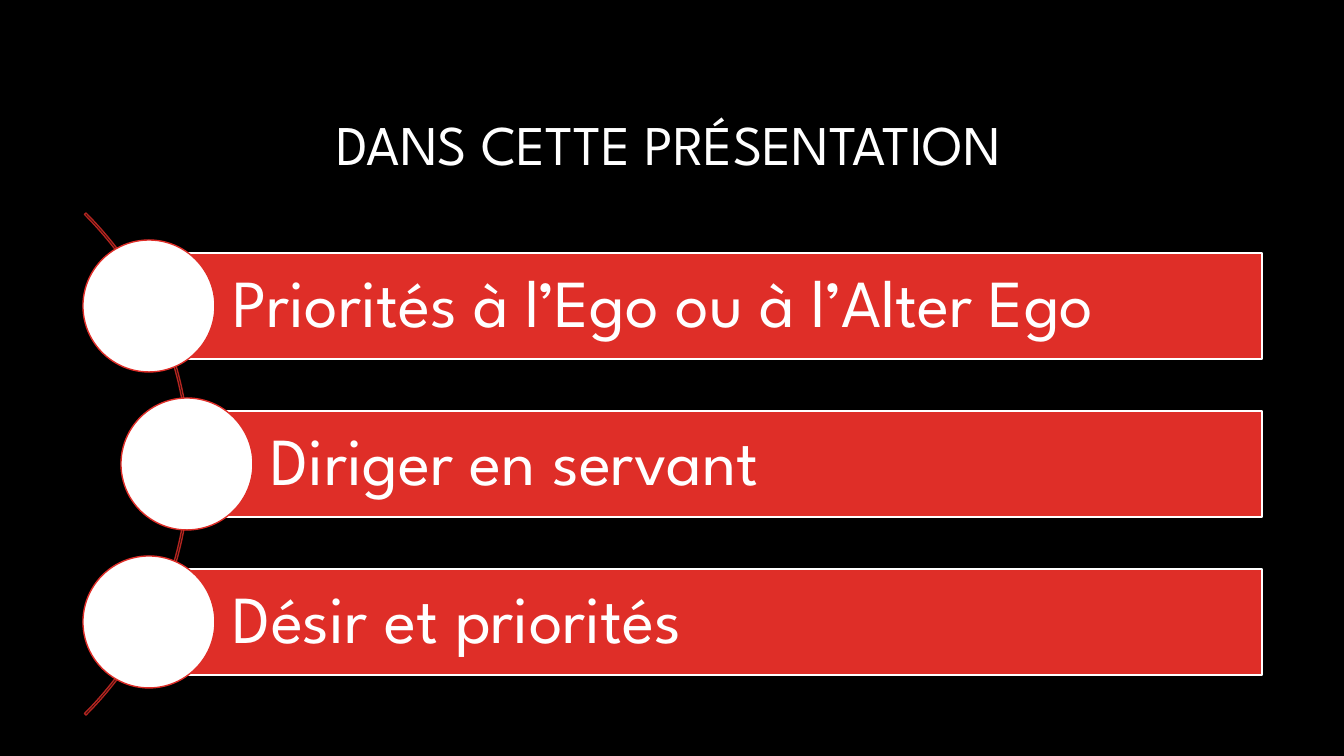
from pptx import Presentation
from pptx import util as u
from pptx.dml.color import RGBColor
from pptx.enum import shapes, text

BLACK = RGBColor(0x00, 0x00, 0x00)
WHITE = RGBColor(0xFF, 0xFF, 0xFF)
RED = RGBColor(0xDF, 0x2E, 0x28)
DARK_RED = RGBColor(0xB3, 0x25, 0x20)
FONT = "League Spartan"
TOPICS = ["Priorités à l’Ego ou à l’Alter Ego", "Diriger en servant", "Désir et priorités"]


def px(n):
    return u.Emu(round(n * 914400 / 100.8))


def add_shape(s, kind, box, fill, line):
    sp = s.shapes.add_shape(kind, *map(px, box))
    sp.shadow.inherit = False
    if fill is None:
        sp.fill.background()
    else:
        sp.fill.solid()
        sp.fill.fore_color.rgb = fill
    sp.line.color.rgb = line
    sp.line.width = u.Pt(1)
    return sp


def set_text(sp, words, size, align):
    tf = sp.text_frame
    tf.text = words
    tf.word_wrap = True
    tf.auto_size = text.MSO_AUTO_SIZE.NONE
    tf.vertical_anchor = text.MSO_ANCHOR.MIDDLE
    p = tf.paragraphs[0]
    p.alignment = align
    p.line_spacing = 0.9
    font = p.runs[0].font
    font.name, font.size, font.color.rgb = FONT, u.Pt(size), WHITE
    return tf


def add_title(s, box):
    title = s.shapes.title
    title.left, title.top, title.width, title.height = map(px, box)
    set_text(title, "DANS CETTE PRÉSENTATION", 40, text.PP_ALIGN.RIGHT)


def add_topic(s, box, topic):
    """A disc at the left of the box, with a bar from its centre to the right edge."""
    x, y, w, h = box
    bar_h = 106
    bar = add_shape(s, shapes.MSO_SHAPE.RECTANGLE,
                    (x + h / 2, y + (h - bar_h) / 2, w - h / 2, bar_h), RED, WHITE)
    tf = set_text(bar, topic, 48, text.PP_ALIGN.LEFT)
    tf.margin_left = px(84)
    tf.margin_top = tf.margin_right = tf.margin_bottom = px(13)
    add_shape(s, shapes.MSO_SHAPE.OVAL, (x, y, h, h), WHITE, RED)


def add_topic_list(s, box):
    x, y, w, h = box
    disc, indent, arc_size = 132, 38, 710
    # Curve behind the discs
    arc = add_shape(s, shapes.MSO_SHAPE.BLOCK_ARC,
                    (x - 603, y + (h - arc_size) / 2, arc_size, arc_size), None, DARK_RED)
    for i, value in enumerate((189, 27, 0.003)):
        arc.adjustments[i] = value
    # Evenly spaced rows, every second one indented along the curve
    pitch = (h - disc) / (len(TOPICS) - 1)
    for i, topic in enumerate(TOPICS):
        shift = indent * (i % 2)
        add_topic(s, (x + shift, y + i * pitch, w - shift, disc), topic)


def main():
    prs = Presentation()
    prs.slide_width, prs.slide_height = px(1344), px(756)
    s = prs.slides.add_slide(prs.slide_layouts[5])
    s.background.fill.solid()
    s.background.fill.fore_color.rgb = BLACK
    add_title(s, (61, 76, 950, 142))
    add_topic_list(s, (83, 240, 1179, 448))
    prs.save("out.pptx")


if __name__ == "__main__":
    main()
